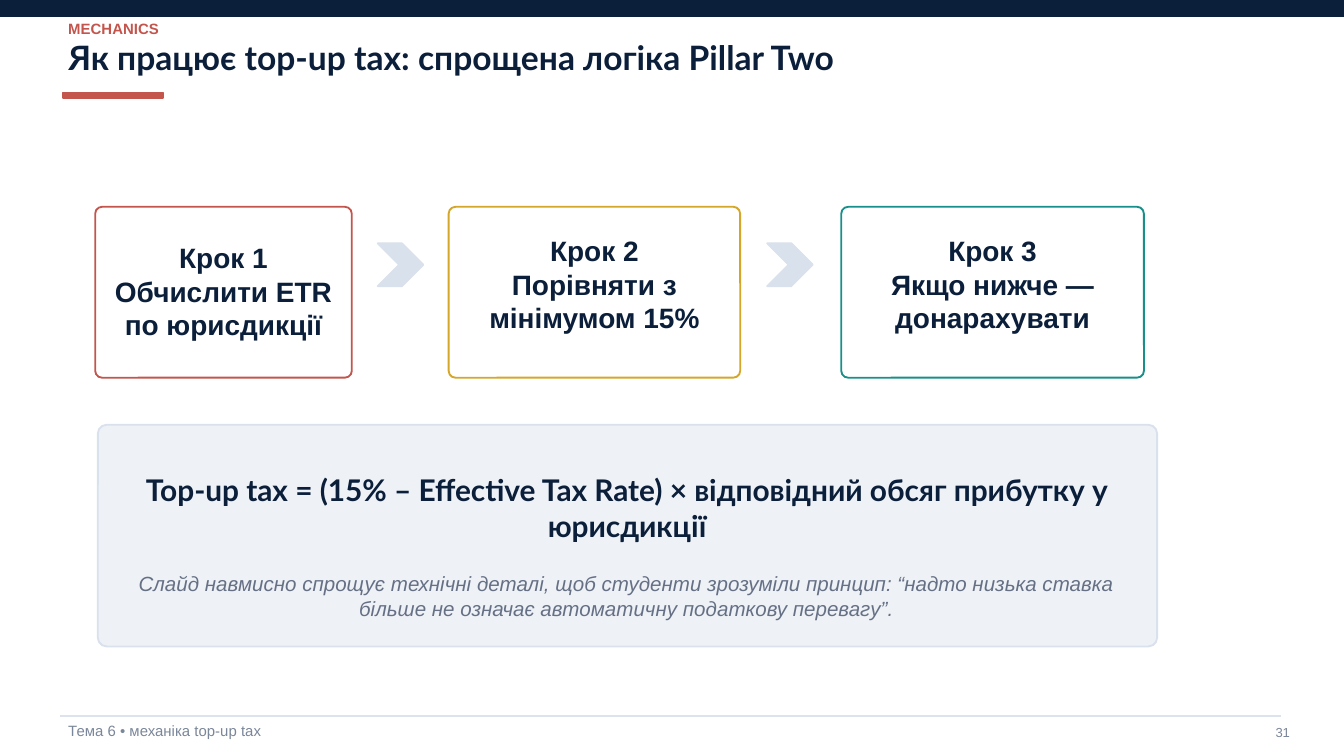
from lxml.etree import SubElement
from pptx import Presentation
from pptx.dml.color import RGBColor
from pptx.enum.shapes import MSO_CONNECTOR, MSO_SHAPE
from pptx.enum.text import MSO_ANCHOR, MSO_AUTO_SIZE, PP_ALIGN
from pptx.oxml.ns import qn
from pptx.util import Cm, Pt

COLORS = {
    "navy": "0B1F3A", "red": "C4554D", "gold": "D4A62A", "teal": "178F8A",
    "white": "FFFFFF", "panel": "EEF2F7", "border": "D9E1EC", "rule": "DDE3ED",
    "note": "667085", "footer": "7A8699",
}
RGB = {name: RGBColor.from_string(value) for name, value in COLORS.items()}

prs = Presentation()
prs.slide_width, prs.slide_height = Cm(25.4), Cm(14.29)
s = prs.slides.add_slide(prs.slide_layouts[5])


def add_box(kind, x, y, w, h, fill, line, adj=None):
    sp = s.shapes.add_shape(kind, Cm(x), Cm(y), Cm(w), Cm(h))
    sp.shadow.inherit = False
    sp.fill.solid()
    sp.fill.fore_color.rgb = RGB[fill]
    sp.line.color.rgb = RGB[line]
    sp.line.width = Pt(1)
    if adj is not None:
        sp.adjustments[0] = adj


def write(sp, x, y, w, h, lines, size, color, font="Arial",
          bold=False, italic=False, align=PP_ALIGN.LEFT):
    sp.left, sp.top, sp.width, sp.height = Cm(x), Cm(y), Cm(w), Cm(h)
    tf = sp.text_frame
    tf.text = "\n".join(lines)
    tf.word_wrap = True
    tf.auto_size = MSO_AUTO_SIZE.NONE
    tf.vertical_anchor = MSO_ANCHOR.TOP
    tf.margin_left = tf.margin_right = Cm(0.1)
    tf.margin_top = tf.margin_bottom = Cm(0.08)
    for p in tf.paragraphs:
        p.alignment = align
        for r in p.runs:
            r.font.name, r.font.size = font, Pt(size)
            r.font.bold, r.font.italic = bold, italic
            r.font.color.rgb = RGB[color]


add_box(MSO_SHAPE.RECTANGLE, 0, 0, 25.4, 0.3, "navy", "navy")
rule = s.shapes.add_connector(MSO_CONNECTOR.STRAIGHT, Cm(1.14), Cm(13.54), Cm(24.21), Cm(13.54))
rule.line.color.rgb = RGB["rule"]
rule.line.width = Pt(1)
SubElement(rule._element.spPr, qn("a:effectLst"))

write(s.shapes.title, 1.19, 0.61, 21.34, 1.37,
      ["Як працює top-up tax: спрощена логіка Pillar Two"], 18, "navy", "Lato", bold=True)
add_box(MSO_SHAPE.RECTANGLE, 1.19, 1.75, 1.9, 0.1, "red", "red")

steps = [
    (1.8, 4.85, 4.47, 4.47, "red", ["Крок 1", "Обчислити ETR", "по юрисдикції"]),
    (8.48, 5.51, 4.34, 4.19, "gold", ["Крок 2", "Порівняти з", "мінімумом 15%"]),
    (15.9, 5.72, 4.34, 4.19, "teal", ["Крок 3", "Якщо нижче —", "донарахувати"]),
]
for x, w, text_y, text_w, color, lines in steps:
    add_box(MSO_SHAPE.ROUNDED_RECTANGLE, x, 3.91, w, 3.23, "white", color, 0.04)
    write(s.shapes.add_textbox(0, 0, 0, 0), x + (w - text_w) / 2, text_y, text_w, 1.14,
          lines, 15, "navy", bold=True, align=PP_ALIGN.CENTER)
for x in (7.14, 14.5):
    add_box(MSO_SHAPE.CHEVRON, x, 4.6, 0.86, 0.81, "border", "border", 0.5)

add_box(MSO_SHAPE.ROUNDED_RECTANGLE, 1.85, 8.03, 20.02, 4.19, "panel", "border", 0.04)

texts = [
    (1.19, 0.3, 7.62, 0.18, "MECHANICS", 8, "red", "Arial", True, False, PP_ALIGN.LEFT),
    (2.62, 8.84, 18.47, 0.58,
     "Top-up tax = (15% – Effective Tax Rate) × відповідний обсяг прибутку у юрисдикції",
     16, "navy", "Lato", True, False, PP_ALIGN.CENTER),
    (2.03, 10.72, 19.63, 0.53,
     "Слайд навмисно спрощує технічні деталі, щоб студенти зрозуміли принцип: "
     "“надто низька ставка більше не означає автоматичну податкову перевагу”.",
     11, "note", "Arial", False, True, PP_ALIGN.CENTER),
    (1.19, 13.56, 8.2, 0.3, "Тема 6 • механіка top-up tax", 8, "footer",
     "Arial", False, False, PP_ALIGN.LEFT),
    (23.72, 13.61, 0.76, 0.38, "31", 7, "footer", "Arial", False, False, PP_ALIGN.RIGHT),
]
for x, y, w, h, text, *style in texts:
    write(s.shapes.add_textbox(0, 0, 0, 0), x, y, w, h, [text], *style)

prs.save("out.pptx")
